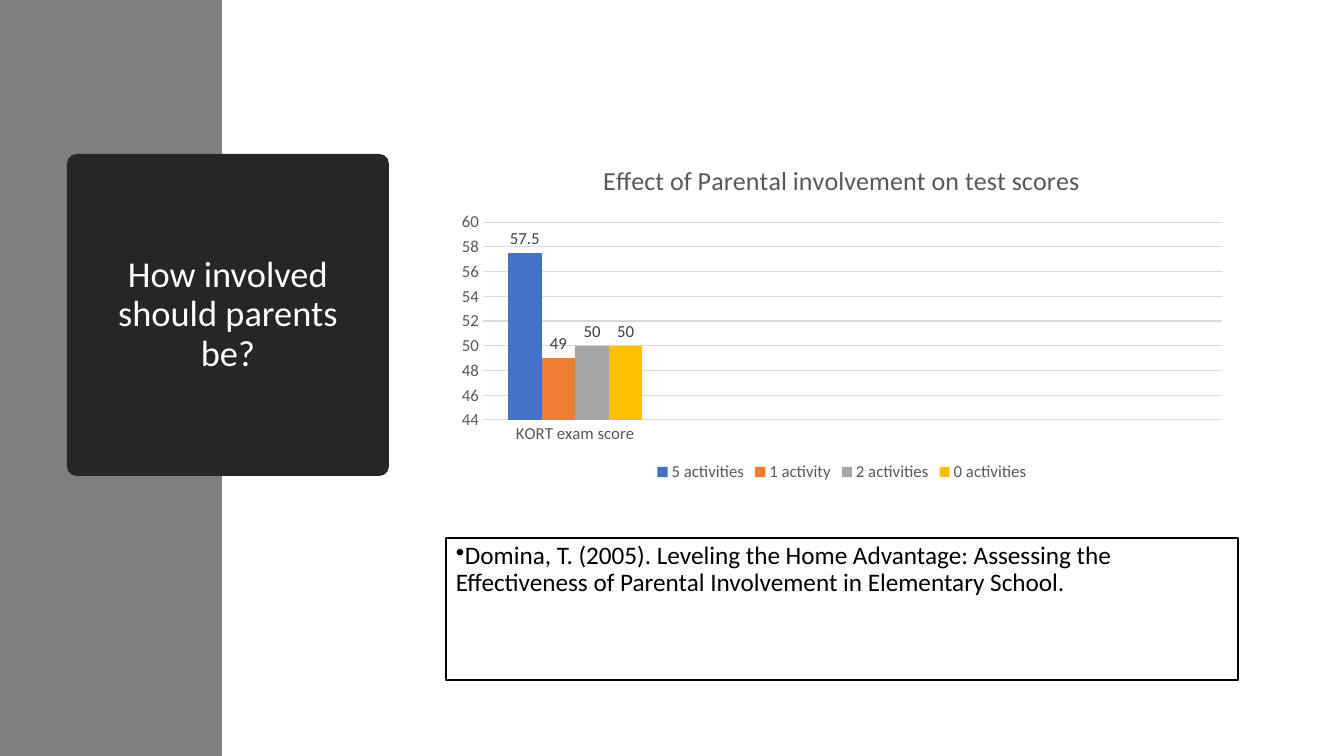
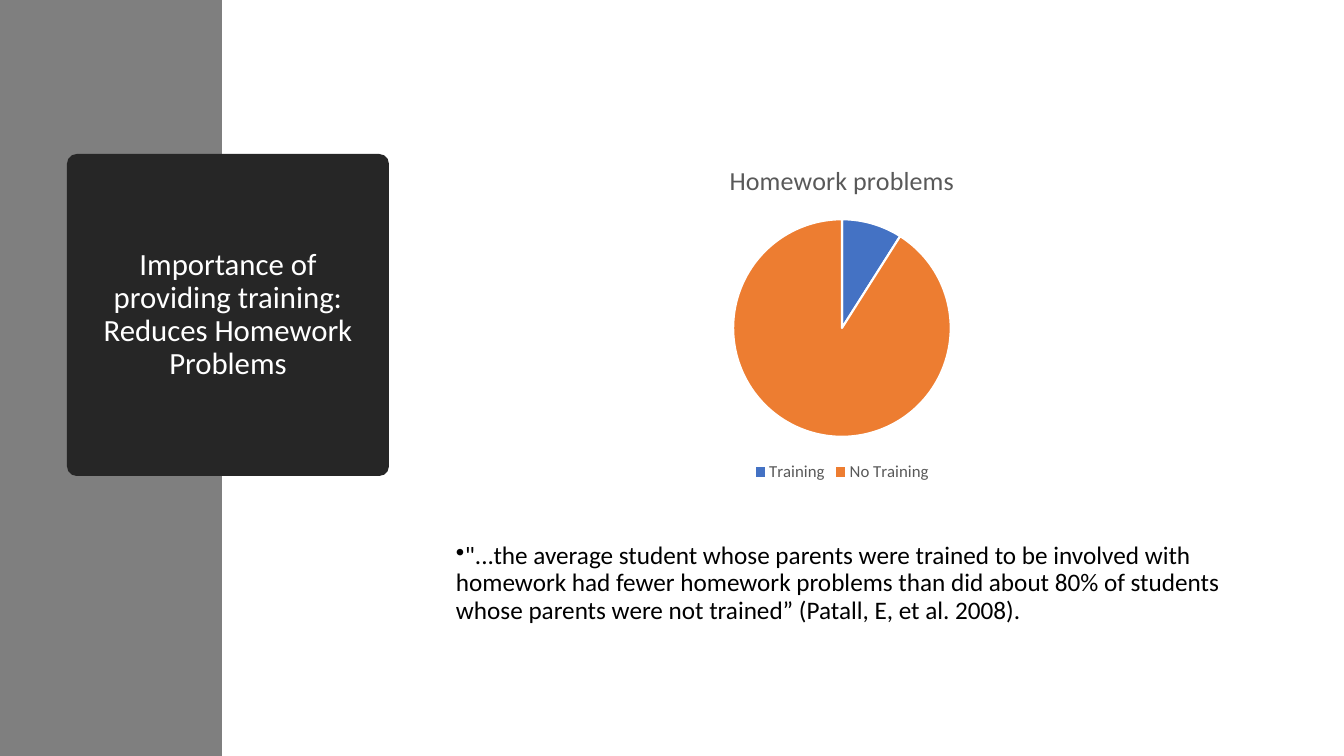
from pptx import Presentation
from pptx.chart.data import CategoryChartData
from pptx.dml.color import RGBColor
from pptx.enum.chart import (XL_CHART_TYPE as ChartType, XL_LABEL_POSITION as LabelPos,
                             XL_LEGEND_POSITION as LegendPos, XL_TICK_MARK as TickMark)
from pptx.enum.shapes import MSO_SHAPE as Shape
from pptx.enum.text import MSO_ANCHOR as Anchor, PP_ALIGN as Align
from pptx.oxml.xmlchemy import OxmlElement
from pptx.util import Emu, Pt

EMU_PER_PX = 914400 / 100.8
FONT = "Calibri"

WHITE = RGBColor(0xFF, 0xFF, 0xFF)
BLACK = RGBColor(0x00, 0x00, 0x00)
BAND_GRAY = RGBColor(0x7F, 0x7F, 0x7F)
CARD_DARK = RGBColor(0x26, 0x26, 0x26)
CHART_TEXT = RGBColor(0x59, 0x59, 0x59)
LABEL_TEXT = RGBColor(0x40, 0x40, 0x40)
GRID_GRAY = RGBColor(0xD9, 0xD9, 0xD9)
ACCENTS = [RGBColor(0x44, 0x72, 0xC4), RGBColor(0xED, 0x7D, 0x31),
           RGBColor(0xA5, 0xA5, 0xA5), RGBColor(0xFF, 0xC0, 0x00)]

PAGE_W, PAGE_H = 1344, 756
BAND_BOX = (0, 0, 222, PAGE_H)
CARD_BOX = (67, 154, 322, 322)
CHART_BOX = (446, 145, 792, 341)
NOTE_BOX = (446, 538, 792, 142)


def px(length):
    return Emu(round(length * EMU_PER_PX))


def emu_box(box):
    return [px(length) for length in box]


def style_font(font, size, color):
    font.name = FONT
    font.size = Pt(size)
    font.bold = False
    font.color.rgb = color


def write_text(frame, text, size, color, align=Align.LEFT, anchor=Anchor.TOP,
               inset=(10, 5), space_after=0):
    """Fill a frame with one paragraph and return that paragraph."""
    frame.word_wrap = True
    frame.vertical_anchor = anchor
    frame.margin_left = frame.margin_right = px(inset[0])
    frame.margin_top = frame.margin_bottom = px(inset[1])
    para = frame.paragraphs[0]
    para.alignment = align
    para.line_spacing = 0.9
    para.space_after = Pt(space_after)
    span = para.add_run()
    span.text = text
    style_font(span.font, size, color)
    return para


def add_bullet(para):
    props = para._p.get_or_add_pPr()
    props.set("marL", "0")
    props.set("indent", str(-px(25)))
    bullet = OxmlElement("a:buChar")
    bullet.set("char", "•")
    props.append(bullet)


def add_block(page, kind, box, fill):
    block = page.shapes.add_shape(kind, *emu_box(box))
    block.shadow.inherit = False
    block.fill.solid()
    block.fill.fore_color.rgb = fill
    block.line.fill.background()
    return block


def add_title_card(page, box, title, size):
    card = add_block(page, Shape.ROUNDED_RECTANGLE, box, CARD_DARK)
    card.adjustments[0] = 0.03
    write_text(card.text_frame, title, size, WHITE, align=Align.CENTER,
               anchor=Anchor.MIDDLE, inset=(30, 15))


def add_note(page, box, text, framed=False):
    if framed:
        note = add_block(page, Shape.RECTANGLE, box, WHITE)
        note.line.color.rgb = BLACK
        note.line.width = Pt(1)
    else:
        note = page.shapes.add_textbox(*emu_box(box))
    add_bullet(write_text(note.text_frame, text, 18, BLACK, space_after=6))


def add_titled_chart(page, box, kind, title, categories, series):
    """Add a chart with its title on top and its legend below."""
    data = CategoryChartData()
    data.categories = categories
    for name, values in series:
        data.add_series(name, values)
    chart = page.shapes.add_chart(kind, *emu_box(box), data).chart
    style_font(chart.font, 12, CHART_TEXT)
    chart.has_title = True
    span = chart.chart_title.text_frame.paragraphs[0].add_run()
    span.text = title
    style_font(span.font, 18.6, CHART_TEXT)
    chart.chart_title.include_in_layout = False
    chart.has_legend = True
    chart.legend.position = LegendPos.BOTTOM
    chart.legend.include_in_layout = False
    style_font(chart.legend.font, 12, CHART_TEXT)
    return chart


def add_score_chart(page, box):
    scores = [("5 activities", 57.5), ("1 activity", 49),
              ("2 activities", 50), ("0 activities", 50)]
    chart = add_titled_chart(
        page, box, ChartType.COLUMN_CLUSTERED,
        "Effect of Parental involvement on test scores",
        ["KORT exam score", "", "", ""],
        [(name, [score, None, None, None]) for name, score in scores])
    plot = chart.plots[0]
    plot.gap_width = 150
    plot.overlap = 0
    plot.vary_by_categories = False
    for series, color in zip(plot.series, ACCENTS):
        series.format.fill.solid()
        series.format.fill.fore_color.rgb = color
        series.invert_if_negative = False
        labels = series.data_labels
        labels.show_value = True
        labels.position = LabelPos.OUTSIDE_END
        style_font(labels.font, 12, LABEL_TEXT)
    for axis in (chart.category_axis, chart.value_axis):
        axis.major_tick_mark = axis.minor_tick_mark = TickMark.NONE
        style_font(axis.tick_labels.font, 12, CHART_TEXT)
        axis.format.line.fill.background()
    scale = chart.value_axis
    scale.minimum_scale, scale.maximum_scale, scale.major_unit = 44, 60, 2
    scale.has_major_gridlines = True
    scale.major_gridlines.format.line.color.rgb = GRID_GRAY
    scale.major_gridlines.format.line.width = Pt(0.75)


def add_homework_pie(page, box):
    title = "Homework problems"
    shares = [9, 91]
    chart = add_titled_chart(page, box, ChartType.PIE, title,
                             ["Training", "No Training"], [(title, shares)])
    plot = chart.plots[0]
    plot.vary_by_categories = True
    for index, color in enumerate(ACCENTS[:len(shares)]):
        slice_format = plot.series[0].points[index].format
        slice_format.fill.solid()
        slice_format.fill.fore_color.rgb = color
        slice_format.line.color.rgb = WHITE
        slice_format.line.width = Pt(1.5)


def add_page(deck, title, title_size, note, add_figure, framed=False):
    page = deck.slides.add_slide(deck.slide_layouts[6])
    add_block(page, Shape.RECTANGLE, BAND_BOX, BAND_GRAY)
    add_title_card(page, CARD_BOX, title, title_size)
    add_note(page, NOTE_BOX, note, framed)
    add_figure(page, CHART_BOX)


def main():
    deck = Presentation()
    deck.slide_width, deck.slide_height = px(PAGE_W), px(PAGE_H)
    add_page(deck, "How involved should parents be?", 26,
             "Domina, T. (2005). Leveling the Home Advantage: Assessing the "
             "Effectiveness of Parental Involvement in Elementary School.",
             add_score_chart, framed=True)
    add_page(deck, "Importance of providing training: Reduces Homework Problems", 22,
             "\"...the average student whose parents were trained to be involved with "
             "homework had fewer homework problems than did about 80% of students "
             "whose parents were not trained” (Patall, E, et al. 2008).",
             add_homework_pie)
    deck.save("out.pptx")


if __name__ == "__main__":
    main()
